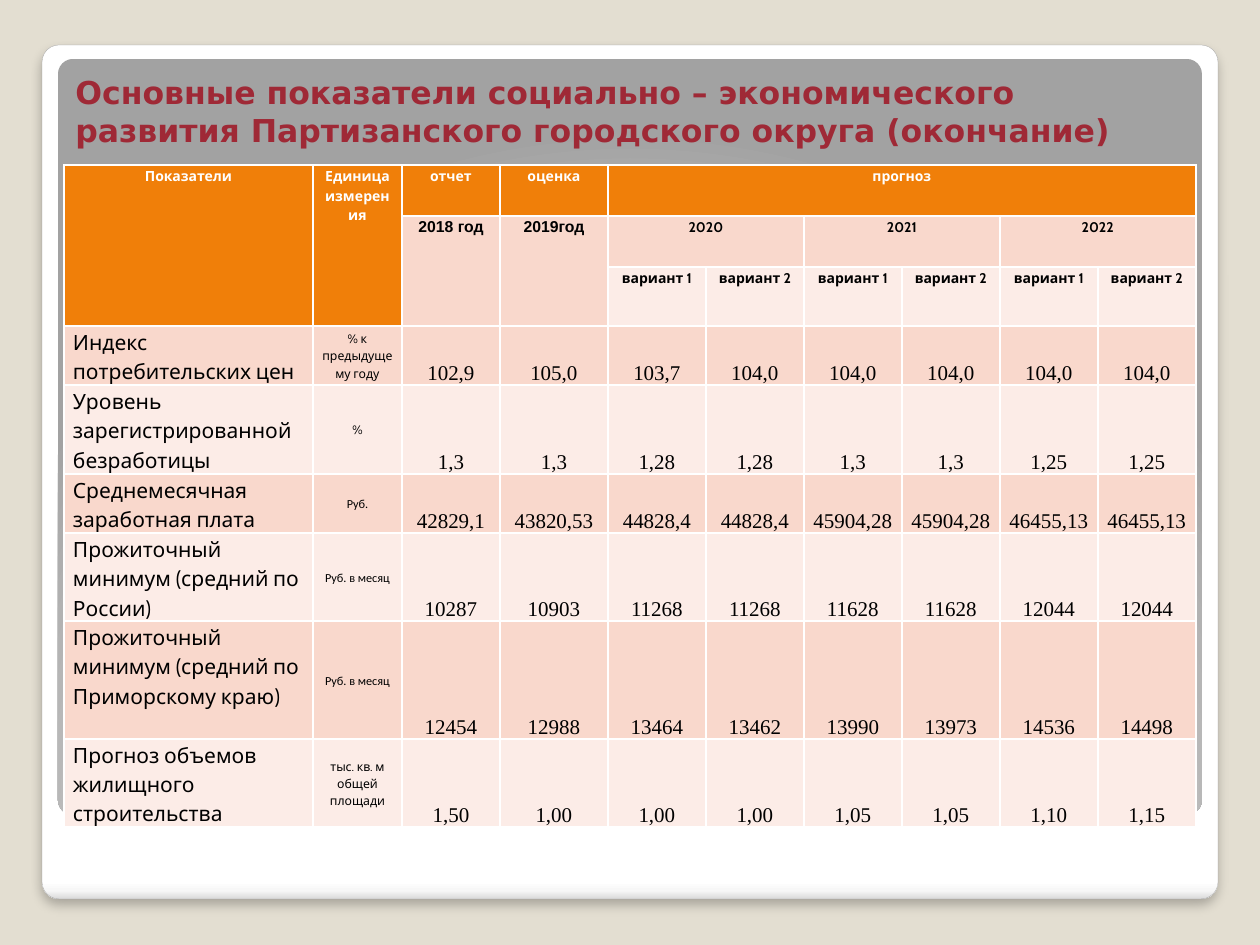
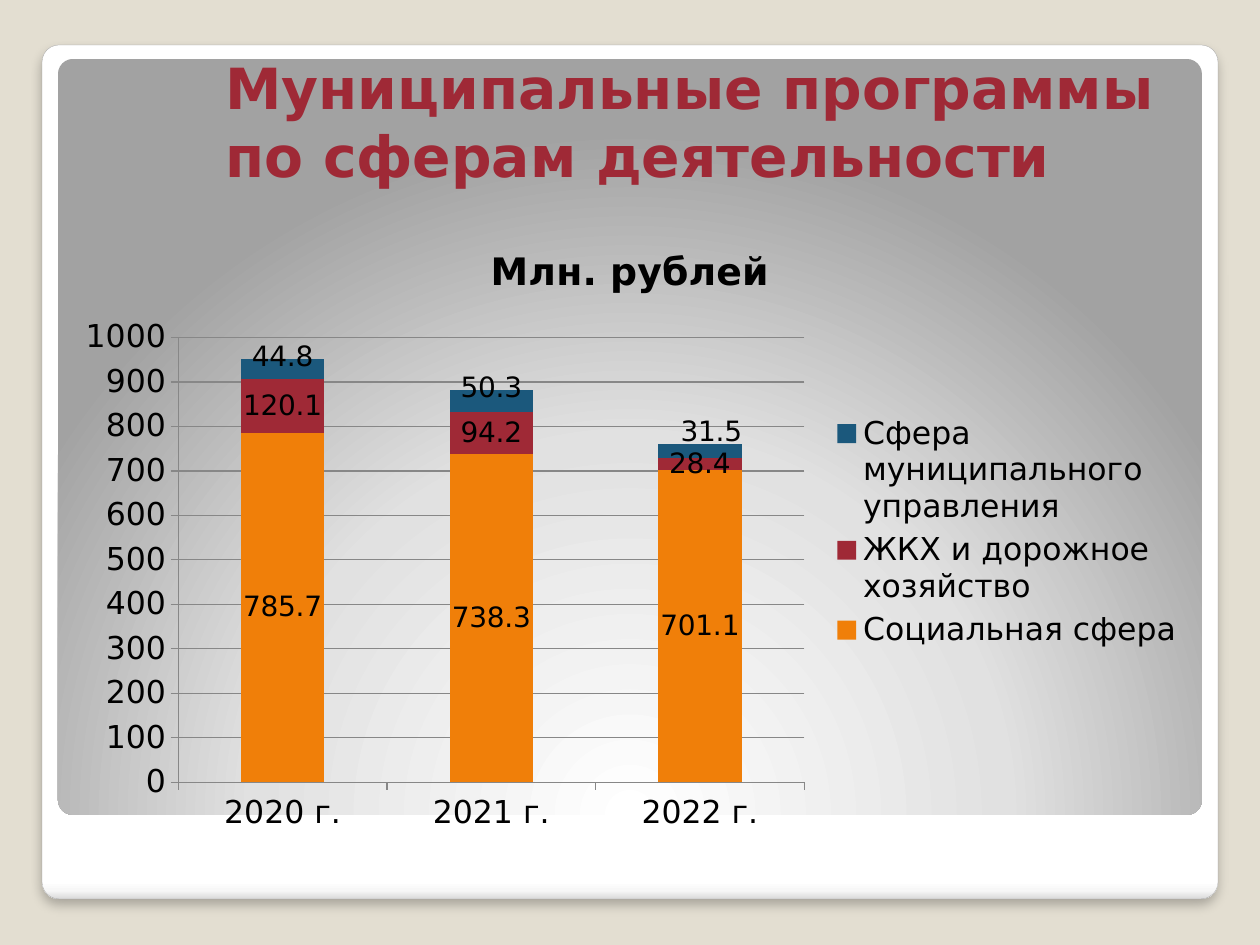
from dataclasses import dataclass

from pptx import Presentation
from pptx.chart.data import CategoryChartData
from pptx.dml.color import RGBColor
from pptx.enum.chart import XL_CHART_TYPE, XL_LABEL_POSITION, XL_LEGEND_POSITION, XL_TICK_MARK
from pptx.enum.shapes import MSO_SHAPE
from pptx.enum.text import MSO_ANCHOR, PP_ALIGN
from pptx.oxml import parse_xml
from pptx.oxml.ns import nsdecls, qn
from pptx.util import Pt

INDICATOR_TITLE = "Основные показатели социально – экономического развития Партизанского городского округа (окончание)"
PROGRAM_TITLE = "Муниципальные программы по сферам деятельности"

HEADERS = [
    (0, 0, 3, 1, "Показатели"),
    (0, 1, 3, 1, "Единица измерения"),
    (0, 2, 1, 1, "отчет"),
    (0, 3, 1, 1, "оценка"),
    (0, 4, 1, 6, "прогноз"),
    (1, 2, 2, 1, "2018 год"),
    (1, 3, 2, 1, "2019год"),
    *[(1, 4 + 2 * index, 1, 2, str(2020 + index)) for index in range(3)],
    *[(2, 4 + index, 1, 1, f"вариант {index % 2 + 1}") for index in range(6)],
]
INDICATORS = [
    ("Индекс потребительских цен", "% к предыдущему году",
     "102,9 105,0 103,7 104,0 104,0 104,0 104,0 104,0"),
    ("Уровень зарегистрированной безработицы", "%",
     "1,3 1,3 1,28 1,28 1,3 1,3 1,25 1,25"),
    ("Среднемесячная заработная плата", "Руб.",
     "42829,1 43820,53 44828,4 44828,4 45904,28 45904,28 46455,13 46455,13"),
    ("Прожиточный минимум (средний по России)", "Руб. в месяц",
     "10287 10903 11268 11268 11628 11628 12044 12044"),
    ("Прожиточный минимум (средний по Приморскому краю)", "Руб. в месяц",
     "12454 12988 13464 13462 13990 13973 14536 14498"),
    ("Прогноз объемов жилищного строительства", "тыс. кв. м общей площади",
     "1,50 1,00 1,00 1,00 1,05 1,05 1,10 1,15"),
]
COLUMN_WIDTHS = [249, 89, 98, 108] + [98] * 6
ROW_HEIGHTS = [51, 51, 59, 59, 89, 59, 88, 118, 88]
HEADER_ROWS = 3
TALL_ROW = 7

CHART_TITLE = "Млн. рублей"
YEARS = ["2020 г.", "2021 г.", "2022 г."]
SPHERES = [
    ("Социальная сфера", [785.7, 738.3, 701.1], "F07F09"),
    ("ЖКХ и дорожное хозяйство", [120.1, 94.2, 28.4], "9F2936"),
    ("Сфера муниципального управления", [44.8, 50.3, 31.5], "1B587C"),
]
TOP_LABEL_SHIFTS = [(0, -0.02), (0, -0.02), (0.01, -0.03)]


@dataclass(frozen=True)
class Theme:
    background: str = "E3DED1"
    title: str = "9F2936"
    header: str = "F07F09"
    dark_band: str = "F9D8CC"
    light_band: str = "FCECE7"
    white: str = "FFFFFF"
    black: str = "000000"
    grid: str = "878787"
    outline: str = "A4A4A4"
    title_font: str = "DejaVu Sans"
    label_font: str = "Cabin"
    unit_font: str = "Calibri"
    year_font: str = "Arial"
    number_font: str = "Times New Roman"
    small_title: float = 18
    large_title: float = 32.4
    header_size: float = 8
    year_size: float = 9
    body_size: float = 12
    unit_size: float = 7
    chart_size: float = 18
    chart_title_size: float = 21.6
    data_label_size: float = 16


THEME = Theme()


def px(value):
    return round(value * 914400 / 126)


def box(*values):
    return [px(value) for value in values]


def rgb(color):
    return RGBColor.from_string(color)


def style_font(font, size, name=THEME.title_font, color=THEME.black, bold=False):
    font.size = Pt(size)
    font.name = name
    font.bold = bold
    font.color.rgb = rgb(color)


def write_text(frame, text, align=PP_ALIGN.LEFT, spacing=None, **font_format):
    paragraph = frame.paragraphs[0]
    paragraph.alignment = align
    paragraph.line_spacing = spacing
    run = paragraph.add_run()
    run.text = text
    style_font(run.font, **font_format)


def gradient(stops, direction):
    stop_xml = "".join(
        f'<a:gs pos="{position * 1000}"><a:srgbClr val="{color}"/></a:gs>' for position, color in stops)
    return parse_xml(f'<a:gradFill {nsdecls("a")} rotWithShape="1"><a:gsLst>{stop_xml}</a:gsLst>'
                     f'{direction}</a:gradFill>')


def add_panel(slide, place, stops, direction):
    panel = slide.shapes.add_shape(MSO_SHAPE.ROUNDED_RECTANGLE, *box(*place))
    panel.adjustments[0] = 0.02
    panel.shadow.inherit = False
    panel.line.fill.background()
    panel.fill.background()
    properties = panel._element.spPr
    properties.replace(properties.find(qn("a:noFill")), gradient(stops, direction))
    return panel


def add_base_slide(presentation, title, place, size):
    slide = presentation.slides.add_slide(presentation.slide_layouts[6])
    slide.background.fill.solid()
    slide.background.fill.fore_color.rgb = rgb(THEME.background)
    card = add_panel(slide, (42, 45, 1176, 854),
                     [(0, "FFFFFF"), (98, "FFFFFF"), (99, "F7F7F7"), (100, "DADADA")],
                     '<a:lin ang="5400000" scaled="0"/>')
    card.line.color.rgb = rgb(THEME.outline)
    card.line.width = Pt(0.16)
    card._element.spPr.find(qn("a:effectLst")).append(parse_xml(
        f'<a:outerShdw {nsdecls("a")} blurRad="{Pt(6)}" dist="{Pt(4)}" dir="5400000" algn="t" '
        f'rotWithShape="0"><a:srgbClr val="{THEME.black}"><a:alpha val="25000"/></a:srgbClr></a:outerShdw>'))
    add_panel(slide, (58, 59, 1144, 756),
              [(0, "FFFFFF"), (55, "E1E1E1"), (100, "A2A2A2")],
              '<a:path path="circle"><a:fillToRect l="50000" t="175000" r="50000" b="-75000"/></a:path>')
    frame = slide.shapes.add_textbox(*box(*place)).text_frame
    frame.word_wrap = True
    frame.vertical_anchor = MSO_ANCHOR.BOTTOM
    write_text(frame, title, size=size, color=THEME.title, bold=True)
    return slide


def format_cell(cell, color):
    cell.fill.solid()
    cell.fill.fore_color.rgb = rgb(color)
    properties = cell._tc.get_or_add_tcPr()
    for index, side in enumerate(("lnL", "lnR", "lnT", "lnB")):
        properties.insert(index, parse_xml(
            f'<a:{side} {nsdecls("a")} w="{Pt(1)}"><a:solidFill><a:srgbClr val="{THEME.white}"/>'
            f'</a:solidFill></a:{side}>'))


def fill_cell(cell, text, anchor=MSO_ANCHOR.TOP, margin=9, top=0, **text_format):
    cell.margin_left = cell.margin_right = px(margin)
    cell.margin_top, cell.margin_bottom = px(top), 0
    cell.vertical_anchor = anchor
    write_text(cell.text_frame, text, **text_format)


def add_indicator_table(slide):
    place = box(64, 165, sum(COLUMN_WIDTHS), sum(ROW_HEIGHTS))
    table = slide.shapes.add_table(len(ROW_HEIGHTS), len(COLUMN_WIDTHS), *place).table
    table.first_row = table.horz_banding = False
    for column, width in zip(table.columns, COLUMN_WIDTHS):
        column.width = px(width)
    for row_index, height in enumerate(ROW_HEIGHTS):
        table.rows[row_index].height = px(height)
        band = THEME.dark_band if row_index % 2 else THEME.light_band
        for column_index in range(len(COLUMN_WIDTHS)):
            in_header = row_index == 0 or (row_index < HEADER_ROWS and column_index < 2)
            format_cell(table.cell(row_index, column_index), THEME.header if in_header else band)

    for row, column, row_span, column_span, text in HEADERS:
        cell = table.cell(row, column)
        if row_span * column_span > 1:
            cell.merge(table.cell(row + row_span - 1, column + column_span - 1))
        is_single_year = row == 1 and column < 4
        fill_cell(cell, text, align=PP_ALIGN.CENTER, spacing=1.15, bold=True,
                  size=THEME.year_size if is_single_year else THEME.header_size,
                  name=THEME.year_font if is_single_year else THEME.label_font,
                  color=THEME.black if row else THEME.white)

    for row, (label, unit, values) in enumerate(INDICATORS, HEADER_ROWS):
        fill_cell(table.cell(row, 0), label, spacing=1.15, size=THEME.body_size, name=THEME.label_font,
                  anchor=MSO_ANCHOR.TOP if row == TALL_ROW else MSO_ANCHOR.MIDDLE)
        fill_cell(table.cell(row, 1), unit, anchor=MSO_ANCHOR.MIDDLE, align=PP_ALIGN.CENTER, spacing=1.15,
                  size=THEME.unit_size,
                  name=THEME.unit_font if unit.startswith("Руб.") else THEME.label_font)
        for column, value in enumerate(values.split(), 2):
            fill_cell(table.cell(row, column), value, anchor=MSO_ANCHOR.BOTTOM, margin=1, top=1,
                      align=PP_ALIGN.CENTER, size=THEME.body_size, name=THEME.number_font)


def shift_top_labels(series):
    for index in range(len(TOP_LABEL_SHIFTS)):
        label = series.points[index].data_label
        label.position = XL_LABEL_POSITION.CENTER
        style_font(label.font, THEME.data_label_size)
    for label_element, (x, y) in zip(series._element.xpath("c:dLbls/c:dLbl"), TOP_LABEL_SHIFTS):
        label_element[0].addnext(parse_xml(
            f'<c:layout {nsdecls("c")}><c:manualLayout><c:x val="{x}"/><c:y val="{y}"/>'
            f'</c:manualLayout></c:layout>'))


def add_program_chart(slide):
    chart_data = CategoryChartData()
    chart_data.categories = YEARS
    for name, values, _ in SPHERES:
        chart_data.add_series(name, values)
    chart = slide.shapes.add_chart(XL_CHART_TYPE.COLUMN_STACKED, *box(63, 220, 1134, 624), chart_data).chart
    style_font(chart.font, THEME.chart_size)
    chart.has_title = True
    write_text(chart.chart_title.text_frame, CHART_TITLE, align=PP_ALIGN.CENTER,
               size=THEME.chart_title_size, bold=True)
    chart.chart_title.include_in_layout = False
    chart.has_legend = True
    chart.legend.position = XL_LEGEND_POSITION.RIGHT
    chart.legend.include_in_layout = False

    plot = chart.plots[0]
    plot.overlap = 100
    plot.gap_width = 150
    plot.vary_by_categories = False
    for series, (_, _, color) in zip(plot.series, SPHERES):
        series.format.fill.solid()
        series.format.fill.fore_color.rgb = rgb(color)
        labels = series.data_labels
        labels.show_value = True
        labels.position = XL_LABEL_POSITION.CENTER
        style_font(labels.font, THEME.data_label_size)
    shift_top_labels(plot.series[len(SPHERES) - 1])

    chart.value_axis.has_major_gridlines = True
    for axis in (chart.category_axis, chart.value_axis):
        axis.major_tick_mark = XL_TICK_MARK.OUTSIDE
        axis.minor_tick_mark = XL_TICK_MARK.NONE
    for line_owner in (chart.category_axis, chart.value_axis, chart.value_axis.major_gridlines):
        line_owner.format.line.color.rgb = rgb(THEME.grid)
        line_owner.format.line.width = Pt(0.75)


def main():
    presentation = Presentation()
    presentation.slide_width, presentation.slide_height = box(1260, 945)
    add_indicator_table(add_base_slide(presentation, INDICATOR_TITLE, (63, 38, 1134, 117), THEME.small_title))
    add_program_chart(add_base_slide(presentation, PROGRAM_TITLE, (213, 38, 984, 157), THEME.large_title))
    presentation.save("out.pptx")


if __name__ == "__main__":
    main()
